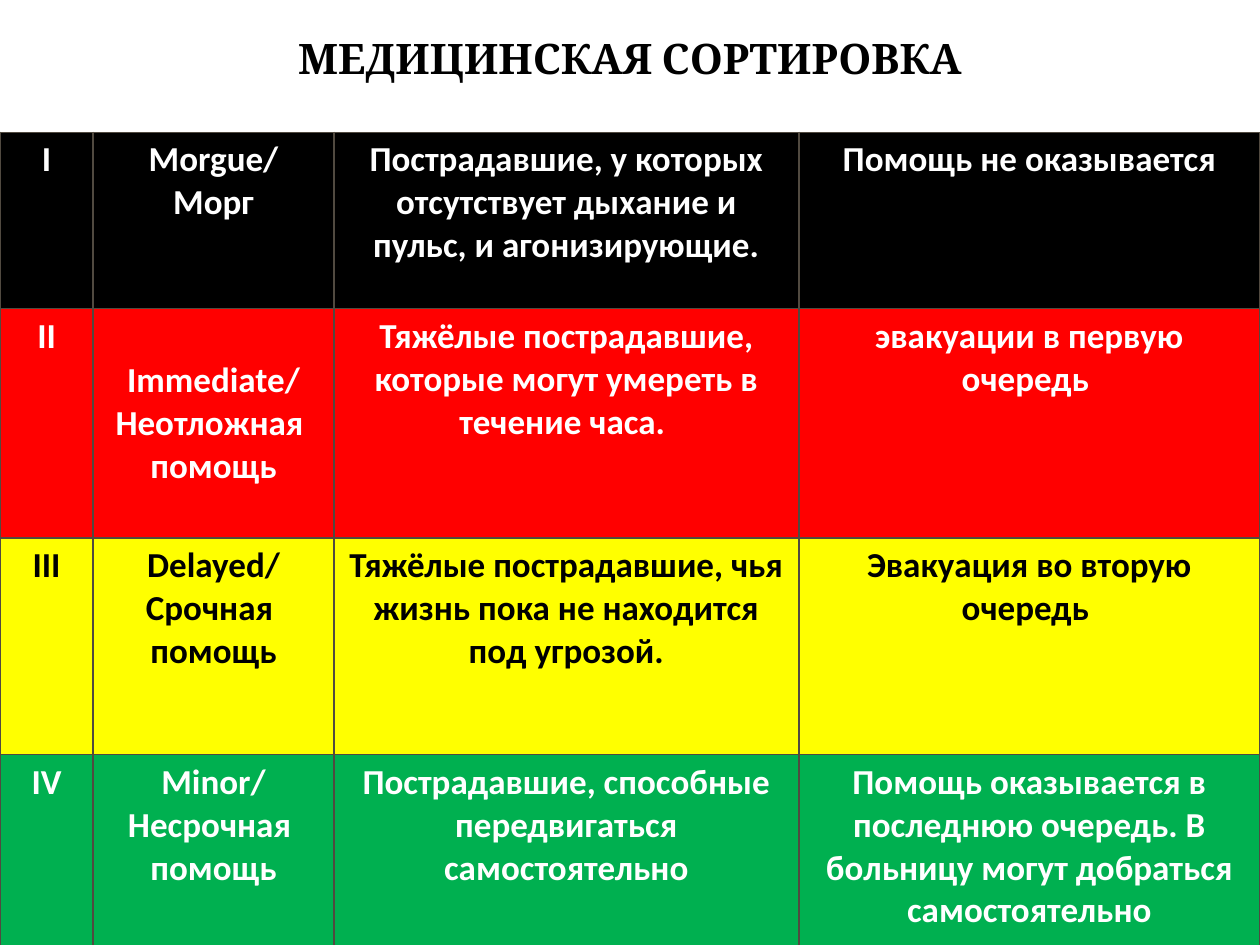
"""Build a slide with a colour-coded medical triage table."""
from lxml import etree
from pptx import Presentation
from pptx.dml.color import RGBColor
from pptx.enum.text import MSO_ANCHOR, PP_ALIGN
from pptx.oxml.ns import qn
from pptx.util import Inches, Pt

CENTER = PP_ALIGN.CENTER
MIDDLE = MSO_ANCHOR.MIDDLE
WIDTHS = [0.74, 1.91, 3.69, 3.66]
ROWS = [
    (1.4, "000000", "FFFFFF", [
        "I", "Morgue/\vМорг",
        "Пострадавшие, у которых отсутствует дыхание и пульс, и агонизирующие.",
        "Помощь не оказывается"]),
    (1.82, "FF0000", "FFFFFF", [
        "II", "Immediate/\vНеотложная \nпомощь",
        "Тяжёлые пострадавшие, которые могут умереть в течение часа. ",
        "эвакуации в первую очередь "]),
    (1.72, "FFFF00", "000000", [
        "III", "Delayed/\vСрочная \nпомощь",
        "Тяжёлые пострадавшие, чья жизнь пока не находится под угрозой.",
        "Эвакуация во вторую очередь "]),
    (1.52, "00B050", "FFFFFF", [
        "IV", "Minor/\vНесрочная \nпомощь",
        "Пострадавшие, способные передвигаться самостоятельно",
        "Помощь оказывается в последнюю очередь. "
        "В больницу могут добраться самостоятельно"]),
]


def style(para, name, size, color):
    para.alignment = CENTER
    font = para.font
    font.name, font.size, font.bold = name, Pt(size), True
    font.color.rgb = RGBColor.from_string(color)


def border(cell, color):
    props = cell._tc.get_or_add_tcPr()
    for side in ("lnL", "lnR", "lnT", "lnB"):
        line = etree.SubElement(props, qn(f"a:{side}"), w=str(Pt(1)))
        fill = etree.SubElement(line, qn("a:solidFill"))
        etree.SubElement(fill, qn("a:srgbClr"), val=color)


prs = Presentation()
prs.slide_width, prs.slide_height = Inches(10), Inches(7.5)
slide = prs.slides.add_slide(prs.slide_layouts[5])

title = slide.shapes.title
title.left, title.top = Inches(0), Inches(0.21)
title.width, title.height = Inches(10), Inches(0.5)
title.text_frame.text = "МЕДИЦИНСКАЯ СОРТИРОВКА"
style(title.text_frame.paragraphs[0], "Cambria", 24, "000000")

table = slide.shapes.add_table(
    len(ROWS), len(WIDTHS), Inches(0), Inches(1.05), Inches(10), Inches(6.45)).table
table.first_row = table.horz_banding = False
for col, width in zip(table.columns, WIDTHS):
    col.width = Inches(width)

for row, (height, back, ink, texts) in zip(table.rows, ROWS):
    row.height = Inches(height)
    for cell, text in zip(row.cells, texts):
        border(cell, "514A40")
        cell.fill.solid()
        cell.fill.fore_color.rgb = RGBColor.from_string(back)
        cell.text_frame.text = text
        for para in cell.text_frame.paragraphs:
            style(para, "Calibri", 20, ink)
table.cell(1, 1).vertical_anchor = MIDDLE

prs.save("out.pptx")
